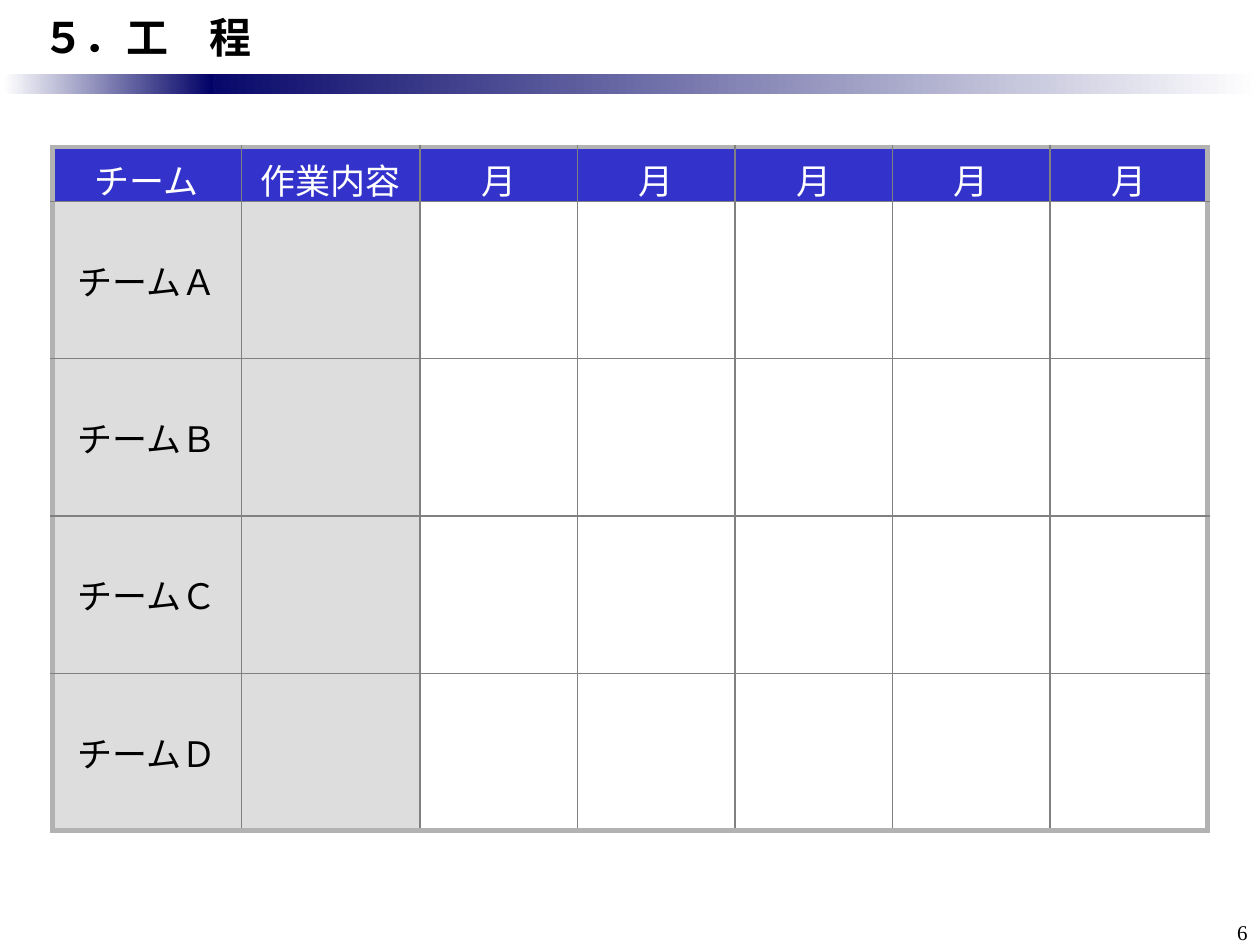
"""Build a team schedule slide with a ruled table under a gradient band."""
from dataclasses import dataclass

from lxml.etree import SubElement
from pptx import Presentation
from pptx.dml.color import RGBColor as Rgb
from pptx.enum.shapes import MSO_SHAPE as Shape
from pptx.enum.text import MSO_ANCHOR as Anchor, MSO_AUTO_SIZE as Fit, PP_ALIGN as Align
from pptx.oxml.ns import qn
from pptx.util import Pt

TITLE = "５．工　程"
PAGE = "6"
HEADS = ["チーム", "作業内容"] + ["月"] * 5
TEAMS = ["チームＡ", "チームＢ", "チームＣ", "チームＤ"]
WIDTHS = [108, 102] + [90] * 5
HEIGHTS = [30, 89.5] + [90] * 3


@dataclass(frozen=True)
class Theme:
    sans: str = "Noto Sans CJK JP"
    serif: str = "Times New Roman"
    black: str = "000000"
    white: str = "FFFFFF"
    navy: str = "000066"
    blue: str = "3333CC"
    pale: str = "DDDDDD"
    rule: str = "808080"
    frame: str = "B2B2B2"
    big: int = 24
    body: int = 20
    small: int = 12


LOOK = Theme()
BARS = [
    (102, 618, LOOK.navy, LOOK.white),
    (2, 120, LOOK.white, LOOK.navy),
]


def write(frame, text, size=LOOK.body, font=LOOK.sans, color=LOOK.black,
          bold=False, align=Align.CENTER, lead=0):
    para = frame.paragraphs[0]
    para.alignment = align
    if lead:
        space = SubElement(para._p.get_or_add_pPr(), qn("a:spcBef"))
        SubElement(space, qn("a:spcPct"), val=str(lead * 1000))
    run = para.add_run()
    run.text = text
    run.font.size = Pt(size)
    run.font.bold = bold
    run.font.name = font
    run.font.color.rgb = Rgb.from_string(color)
    SubElement(run._r.get_or_add_rPr(), qn("a:ea"), typeface=LOOK.sans)


def add_bar(slide, left, width, start, end):
    bar = slide.shapes.add_shape(Shape.RECTANGLE, Pt(left), Pt(42), Pt(width), Pt(12))
    bar.shadow.inherit = False
    bar.line.fill.background()
    bar.fill.gradient()
    bar.fill.gradient_angle = 0
    for stop, color in zip(bar.fill.gradient_stops, (start, end)):
        stop.color.rgb = Rgb.from_string(color)


def rule_cell(cell, outer):
    props = cell._tc.get_or_add_tcPr()
    for side in "LRTB":
        color, width = (LOOK.frame, 3) if side in outer else (LOOK.rule, 1)
        line = SubElement(props, qn(f"a:ln{side}"), w=str(Pt(width)))
        fill = SubElement(line, qn("a:solidFill"))
        SubElement(fill, qn("a:srgbClr"), val=color)


def fill_cell(cell, color):
    if color:
        cell.fill.solid()
        cell.fill.fore_color.rgb = Rgb.from_string(color)
    else:
        cell.fill.background()


def add_grid(slide):
    rows, cols = len(HEIGHTS), len(WIDTHS)
    grid = slide.shapes.add_table(rows, cols, Pt(30), Pt(84), Pt(sum(WIDTHS)),
                                  Pt(sum(HEIGHTS))).table
    grid.first_row = grid.horz_banding = False
    for col, width in zip(grid.columns, WIDTHS):
        col.width = Pt(width)
    for row, height in zip(grid.rows, HEIGHTS):
        row.height = Pt(height)
    for r in range(rows):
        for c in range(cols):
            cell = grid.cell(r, c)
            edges = {"L": c == 0, "R": c == cols - 1, "T": r == 0, "B": r == rows - 1}
            rule_cell(cell, [side for side, hit in edges.items() if hit])
            fill_cell(cell, LOOK.blue if r == 0 else LOOK.pale if c < 2 else None)
    for c, head in enumerate(HEADS):
        write(grid.cell(0, c).text_frame, head, font=LOOK.serif, color=LOOK.white, lead=20)
    for r, team in enumerate(TEAMS, 1):
        cell = grid.cell(r, 0)
        cell.vertical_anchor = Anchor.MIDDLE
        write(cell.text_frame, team, lead=20)


def add_title(slide):
    title = slide.shapes.title
    title.left, title.top, title.width, title.height = Pt(0), Pt(0), Pt(720), Pt(42)
    frame = title.text_frame
    frame.auto_size = Fit.NONE
    frame.vertical_anchor = Anchor.MIDDLE
    frame.margin_left = Pt(24)
    write(frame, TITLE, size=LOOK.big, bold=True, align=Align.LEFT)


def add_page(slide):
    frame = slide.shapes.add_textbox(Pt(678), Pt(522), Pt(42), Pt(18)).text_frame
    frame.word_wrap = True
    write(frame, PAGE, size=LOOK.small, font=LOOK.serif, align=Align.RIGHT)


def main():
    deck = Presentation()
    deck.slide_width, deck.slide_height = Pt(720), Pt(540)
    slide = deck.slides.add_slide(deck.slide_layouts[5])
    for bar in BARS:
        add_bar(slide, *bar)
    add_page(slide)
    add_title(slide)
    add_grid(slide)
    deck.save("out.pptx")


if __name__ == "__main__":
    main()
